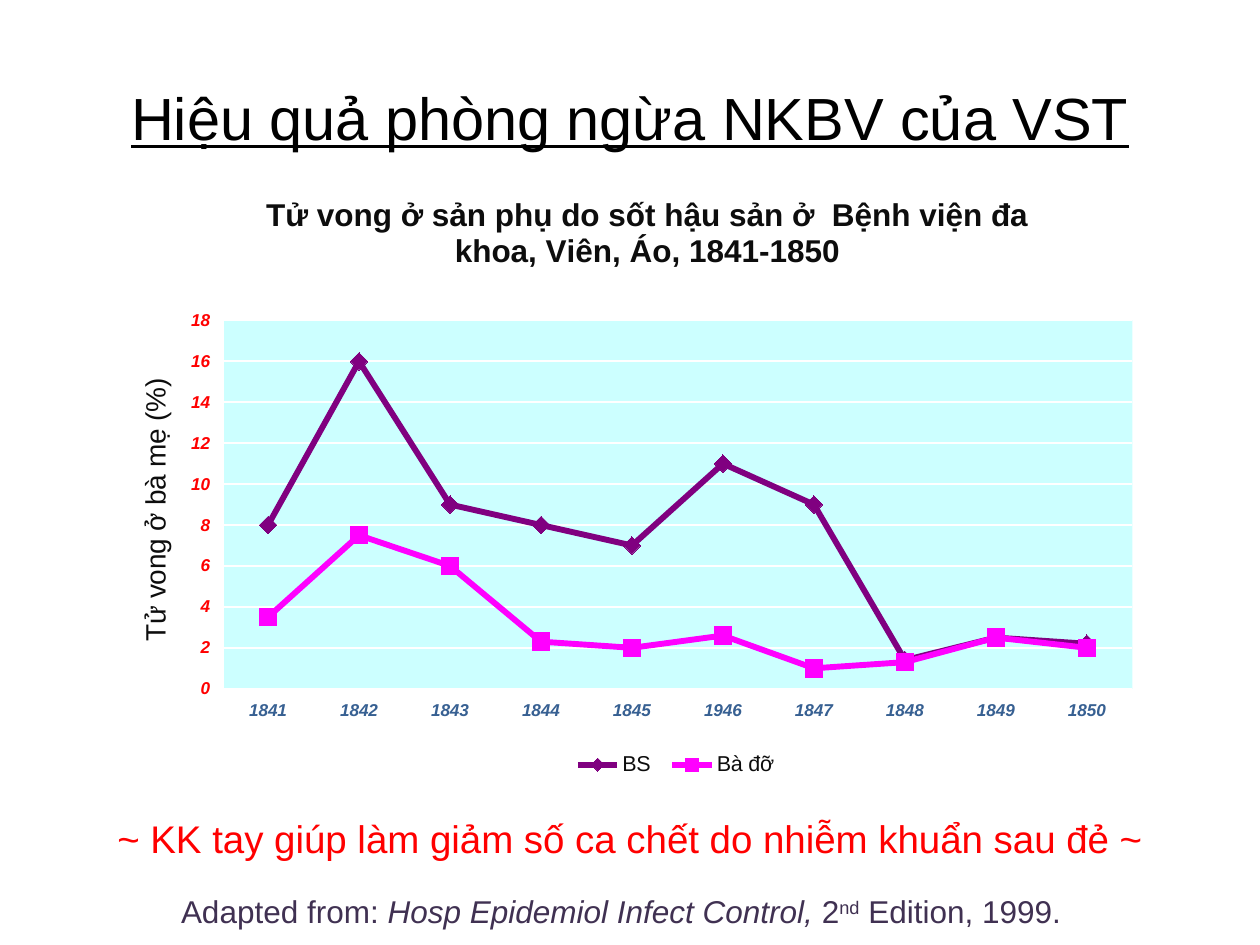
import dataclasses

import lxml.etree
import pptx
import pptx.chart.data
import pptx.dml.color
import pptx.enum.chart
import pptx.enum.text
import pptx.oxml
import pptx.oxml.ns
import pptx.util
from pptx.util import Cm


@dataclasses.dataclass(frozen=True)
class Theme:
    font: str = "Arial"
    black: str = "000000"
    ink: str = "0D0D0D"
    white: str = "FFFFFF"
    red: str = "FF0000"
    years: str = "376092"
    source: str = "403152"
    plot: str = "CCFFFF"
    doctors: str = "800080"
    midwives: str = "FF00FF"
    headline_size: float = 34
    message_size: float = 22
    body_size: float = 18
    axis_title_size: float = 16
    legend_size: float = 12.3
    tick_size: float = 9.8
    series_width: float = 3.36
    grid_width: float = 1.12


theme = Theme()
qn = pptx.oxml.ns.qn


def style(font, size, color, bold=False, italic=False):
    font.name = theme.font
    font.size = pptx.util.Pt(size)
    font.bold = bold
    font.italic = italic
    font.color.rgb = pptx.dml.color.RGBColor.from_string(color)


def place(element, index, **fractions):
    for old in element.findall(qn("c:layout")):
        element.remove(old)
    layout = lxml.etree.Element(qn("c:layout"))
    manual = lxml.etree.SubElement(layout, qn("c:manualLayout"))
    if element.tag == qn("c:plotArea"):
        lxml.etree.SubElement(manual, qn("c:layoutTarget"), val="inner")
    for side in ("x", "y"):
        lxml.etree.SubElement(manual, qn(f"c:{side}Mode"), val="edge")
    for side, fraction in fractions.items():
        lxml.etree.SubElement(manual, qn(f"c:{side}"), val=str(fraction))
    element.insert(index, layout)


deck = pptx.Presentation()
deck.slide_width, deck.slide_height = Cm(25.4), Cm(19.05)
slide = deck.slides.add_slide(deck.slide_layouts[6])

center = pptx.enum.text.PP_ALIGN.CENTER
left = pptx.enum.text.PP_ALIGN.LEFT
lines = [
    ((1.27, 0.76, 22.86, 3.18), ["Hiệu quả phòng ngừa NKBV của VST"],
     theme.headline_size, theme.black, center),
    ((0.15, 16.31, 25.1, 1.19), ["~ KK tay giúp làm giảm số ca chết do nhiễm khuẩn sau đẻ ~"],
     theme.message_size, theme.red, center),
    ((3.4, 17.86, 18.62, 1.02),
     ["Adapted from: ", "Hosp Epidemiol Infect Control, ", "2", "nd", " Edition, 1999."],
     theme.body_size, theme.source, left),
]
paragraphs = []
for box, pieces, size, color, alignment in lines:
    frame = slide.shapes.add_textbox(*map(Cm, box)).text_frame
    frame.word_wrap = True
    frame.vertical_anchor = pptx.enum.text.MSO_ANCHOR.MIDDLE
    paragraph = frame.paragraphs[0]
    paragraph.alignment = alignment
    style(paragraph.font, size, color)
    for piece in pieces:
        paragraph.add_run().text = piece
    paragraphs.append(paragraph)
headline, message, citation = paragraphs
headline.runs[0].font.underline = True
citation.runs[1].font.italic = True
citation.runs[3].font._element.set("baseline", "30000")

mortality = pptx.chart.data.CategoryChartData()
mortality.categories = ["1841", "1842", "1843", "1844", "1845",
                        "1946", "1847", "1848", "1849", "1850"]
mortality.add_series("BS", [8, 16, 9, 8, 7, 11, 9, 1.4, 2.5, 2.2])
mortality.add_series("Bà đỡ", [3.5, 7.5, 6, 2.3, 2, 2.6, 1, 1.3, 2.5, 2])
chart = slide.shapes.add_chart(
    pptx.enum.chart.XL_CHART_TYPE.LINE_MARKERS,
    Cm(2.46), Cm(3.43), Cm(20.68), Cm(12.42), mortality).chart
style(chart.font, theme.body_size, theme.black)
chart.plots[0].vary_by_categories = False

years, deaths = chart.category_axis, chart.value_axis
deaths.minimum_scale, deaths.maximum_scale, deaths.major_unit = 0, 18, 2
deaths.has_major_gridlines = True
for axis, color in ((years, theme.years), (deaths, theme.red)):
    axis.major_tick_mark = pptx.enum.chart.XL_TICK_MARK.OUTSIDE
    style(axis.tick_labels.font, theme.tick_size, color, bold=True, italic=True)
for ruled in (years, deaths, deaths.major_gridlines):
    ruled.format.line.color.rgb = pptx.dml.color.RGBColor.from_string(theme.white)
    ruled.format.line.width = pptx.util.Pt(theme.grid_width)

chart.has_title = True
titles = [
    (chart.chart_title, "Tử vong ở sản phụ do sốt hậu sản ở  Bệnh viện đa khoa, Viên, Áo, 1841-1850",
     theme.body_size, True, 0.135, 0.03),
    (deaths.axis_title, "Tử vong ở bà mẹ (%)", theme.axis_title_size, False, 0.01, 0.33),
]
for title, wording, size, bold, x, y in titles:
    title.text_frame.text = wording
    style(title.text_frame.paragraphs[0].font, size, theme.ink, bold=bold)
    place(title._element, 1, x=x, y=y)
deaths.axis_title._element.find(".//" + qn("a:bodyPr")).set("rot", "-5400000")

chart.has_legend = True
chart.legend.position = pptx.enum.chart.XL_LEGEND_POSITION.BOTTOM
chart.legend.include_in_layout = False
style(chart.legend.font, theme.legend_size, theme.ink)
place(chart.legend._element, 1, x=0.43, y=0.94, w=0.22, h=0.05)

marker_style = pptx.enum.chart.XL_MARKER_STYLE
looks = [(theme.doctors, marker_style.DIAMOND), (theme.midwives, marker_style.SQUARE)]
for series, (color, symbol) in zip(chart.plots[0].series, looks):
    rgb = pptx.dml.color.RGBColor.from_string(color)
    series.smooth = False
    series.format.line.color.rgb = rgb
    series.format.line.width = pptx.util.Pt(theme.series_width)
    series.marker.style, series.marker.size = symbol, 10
    series.marker.format.fill.solid()
    series.marker.format.fill.fore_color.rgb = rgb
    series.marker.format.line.color.rgb = rgb

plot_area = chart._chartSpace.chart.plotArea
place(plot_area, 0, x=0.098, y=0.244, w=0.887, h=0.598)
backdrop = lxml.etree.SubElement(plot_area, qn("c:spPr"))
fill = lxml.etree.SubElement(backdrop, qn("a:solidFill"))
lxml.etree.SubElement(fill, qn("a:srgbClr"), val=theme.plot)

deck.save("out.pptx")
